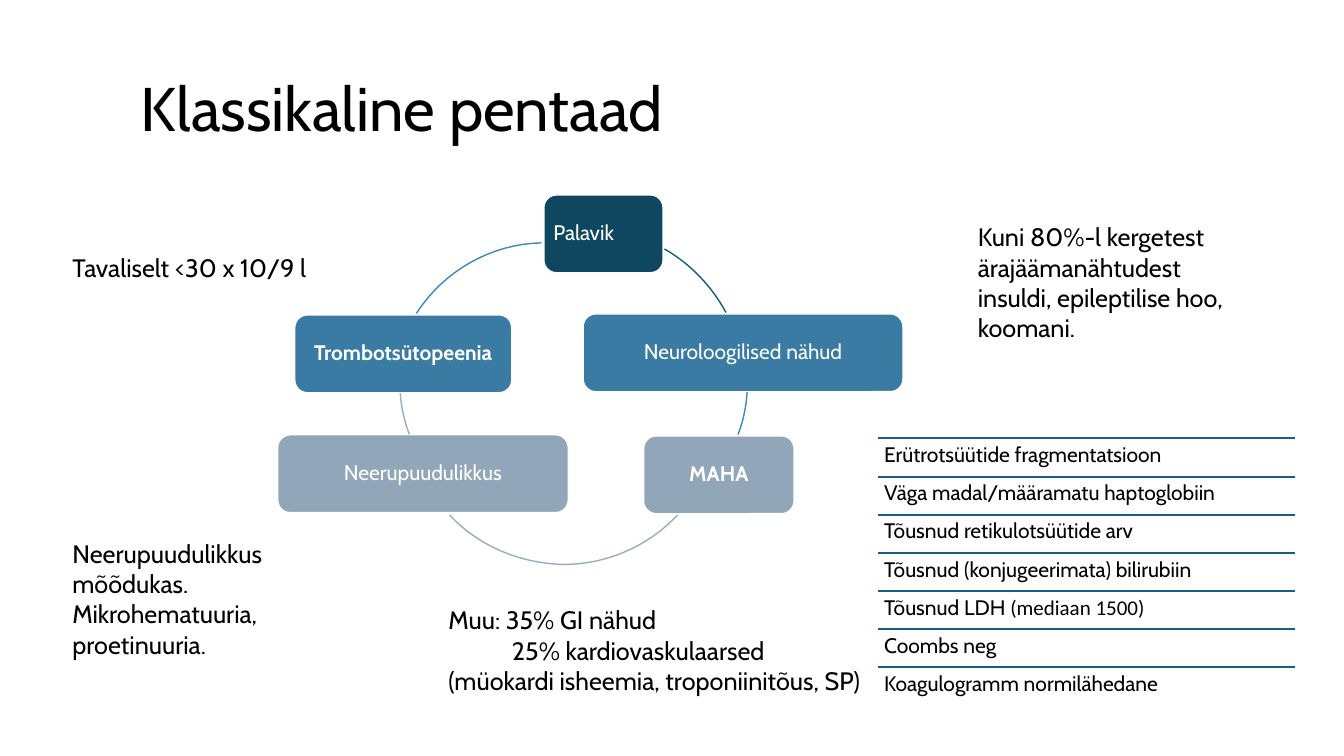
from lxml import etree
from pptx import Presentation
from pptx.dml.color import RGBColor
from pptx.enum.shapes import MSO_CONNECTOR, MSO_SHAPE
from pptx.enum.text import MSO_ANCHOR, MSO_AUTO_SIZE, PP_ALIGN
from pptx.oxml.ns import qn
from pptx.util import Inches, Pt

COLORS = {
    "black": "000000", "white": "FFFFFF", "rule": "156082",
    "fever": "104760", "middle": "3A7BA3", "lower": "91A7B9",
    "fever_arc": "145C7C", "middle_arc": "3E89B6", "lower_arc": "97AEC1",
}
FONT = "Cabin"

# Left, top, width, text, colour, bold
SIGNS = [
    (5.39, 1.93, 1.19, "Palavik\t", "fever", False),
    (5.78, 3.11, 3.18, "Neuroloogilised nähud", "middle", False),
    (6.38, 4.32, 1.5, "MAHA", "lower", True),
    (2.75, 4.31, 2.89, "Neerupuudulikkus", "lower", False),
    (2.92, 3.12, 2.16, "Trombotsütopeenia", "middle", True),
]
SIGN_HEIGHT = 0.78

# Colour and Bézier points: a start, then three points per curve
ARCS = [
    ("fever_arc", [(6.59, 2.47), (6.85, 2.62), (7.06, 2.84), (7.2, 3.1)]),
    ("middle_arc", [(7.41, 3.89), (7.4, 4.04), (7.37, 4.18), (7.32, 4.31)]),
    ("lower_arc", [(6.72, 5.11), (6.43, 5.42), (6.02, 5.6), (5.59, 5.6),
                   (5.16, 5.59), (4.75, 5.42), (4.46, 5.11)]),
    ("lower_arc", [(4.06, 4.31), (4.01, 4.18), (3.98, 4.04), (3.97, 3.9)]),
    ("middle_arc", [(4.13, 3.11), (4.4, 2.69), (4.87, 2.42), (5.37, 2.41)]),
]
ARC_STEPS = 16

# Each finding is a list of (text, font) pieces
FINDINGS = [
    [("Erütrotsüütide fragmentatsioon", FONT)],
    [("Väga madal/määramatu haptoglobiin", FONT)],
    [("Tõusnud retikulotsüütide arv", FONT)],
    [("Tõusnud (konjugeerimata) bilirubiin", FONT)],
    [("Tõusnud LDH", FONT), (" (mediaan 1500)", "Calibri")],
    [("Coombs neg", FONT)],
    [("Koagulogramm normilähedane", FONT)],
]
LIST_LEFT, LIST_TOP, LIST_WIDTH, LIST_BOTTOM = 8.71, 4.35, 4.13, 7.0
ROW_HEIGHT = (LIST_BOTTOM - LIST_TOP) / len(FINDINGS)

# Left, top, width, height, text
NOTES = [
    (0.62, 2.45, 2.89, 0.4, "Tavaliselt <30 x 10/9 l"),
    (9.6, 2.15, 2.98, 1.31, "Kuni 80%-l kergetest ärajäämanähtudest "
     "insuldi, epileptilise hoo, koomani."),
    (0.62, 5.29, 2.64, 1.31, "Neerupuudulikkus mõõdukas. "
     "Mikrohematuuria, proetinuuria."),
]
OTHER_SIGNS = (4.35, 5.95, 4.36, 1.01, "Muu: 35% GI nähud\n25% kardiovaskulaarsed "
               "(müokardi isheemia, troponiinitõus, SP)")


def rgb(name):
    return RGBColor.from_string(COLORS[name])


def style_run(run, size, color="black", bold=False, font=FONT):
    run.font.name = font
    run.font.size = Pt(size)
    run.font.bold = bold
    run.font.color.rgb = rgb(color)


def set_insets(frame, inset):
    frame.margin_left = frame.margin_right = Inches(inset)
    frame.margin_top = frame.margin_bottom = Inches(inset)


def add_text(slide, left, top, width, height, text, size):
    box = slide.shapes.add_textbox(
        Inches(left), Inches(top), Inches(width), Inches(height))
    frame = box.text_frame
    frame.word_wrap = True
    frame.text = text
    for paragraph in frame.paragraphs:
        for run in paragraph.runs:
            style_run(run, size)
    return frame


def add_title(slide):
    title = add_text(slide, 1.3, 0.61, 8.45, 1, "Klassikaline pentaad", 44)
    title.vertical_anchor = MSO_ANCHOR.MIDDLE
    title.paragraphs[0].line_spacing = 0.9


def add_sign(slide, left, top, width, text, color, bold):
    sign = slide.shapes.add_shape(
        MSO_SHAPE.ROUNDED_RECTANGLE,
        Inches(left), Inches(top), Inches(width), Inches(SIGN_HEIGHT))
    sign.shadow.inherit = False
    sign.fill.solid()
    sign.fill.fore_color.rgb = rgb(color)
    sign.line.color.rgb = rgb("white")
    sign.line.width = Pt(1.5)
    frame = sign.text_frame
    frame.word_wrap = True
    frame.vertical_anchor = MSO_ANCHOR.MIDDLE
    set_insets(frame, 0.06)
    frame.text = text
    paragraph = frame.paragraphs[0]
    paragraph.alignment = PP_ALIGN.CENTER
    paragraph.line_spacing = 0.9
    for run in paragraph.runs:
        style_run(run, 15, "white", bold)


def curve_point(controls, t):
    weights = ((1 - t) ** 3, 3 * t * (1 - t) ** 2, 3 * t ** 2 * (1 - t), t ** 3)
    return tuple(Inches(sum(w * point[axis] for w, point in zip(weights, controls)))
                 for axis in (0, 1))


def add_arc(slide, color, points):
    outline = [curve_point(points[i:i + 4], step / ARC_STEPS)
               for i in range(0, len(points) - 1, 3)
               for step in range(ARC_STEPS + 1)]
    builder = slide.shapes.build_freeform(*outline[0])
    builder.add_line_segments(outline[1:], close=False)
    arc = builder.convert_to_shape()
    arc.shadow.inherit = False
    arc.fill.background()
    arc.line.color.rgb = rgb(color)
    arc.line.width = Pt(1)


def add_finding(slide, top, pieces):
    rule = slide.shapes.add_connector(
        MSO_CONNECTOR.STRAIGHT, Inches(LIST_LEFT), Inches(top),
        Inches(LIST_LEFT + LIST_WIDTH), Inches(top))
    rule.line.color.rgb = rgb("rule")
    rule.line.width = Pt(1.5)
    etree.SubElement(rule._element.spPr, qn("a:effectLst"))
    frame = add_text(slide, LIST_LEFT, top, LIST_WIDTH, ROW_HEIGHT, "", 15)
    set_insets(frame, 0.06)
    paragraph = frame.paragraphs[0]
    paragraph.line_spacing = 0.9
    for text, font in pieces:
        run = paragraph.add_run()
        run.text = text
        style_run(run, 15, font=font)


def add_note(slide, left, top, width, height, text):
    frame = add_text(slide, left, top, width, height, text, 18)
    frame.auto_size = MSO_AUTO_SIZE.SHAPE_TO_FIT_TEXT
    return frame


def main():
    prs = Presentation()
    prs.slide_width, prs.slide_height = Inches(13.33), Inches(7.5)
    slide = prs.slides.add_slide(prs.slide_layouts[6])
    add_title(slide)

    # Cycle of the five signs
    for sign in SIGNS:
        add_sign(slide, *sign)
    for arc in ARCS:
        add_arc(slide, *arc)

    # Ruled list of laboratory findings
    for row, pieces in enumerate(FINDINGS):
        add_finding(slide, LIST_TOP + row * ROW_HEIGHT, pieces)

    # Notes around the cycle
    for note in NOTES:
        add_note(slide, *note)
    other_signs = add_note(slide, *OTHER_SIGNS)
    # First-line indent sets the second share below the first
    indented = other_signs.paragraphs[1]._p.get_or_add_pPr()
    indented.set("marL", "0")
    indented.set("indent", str(Inches(0.63)))

    prs.save("out.pptx")


if __name__ == "__main__":
    main()
